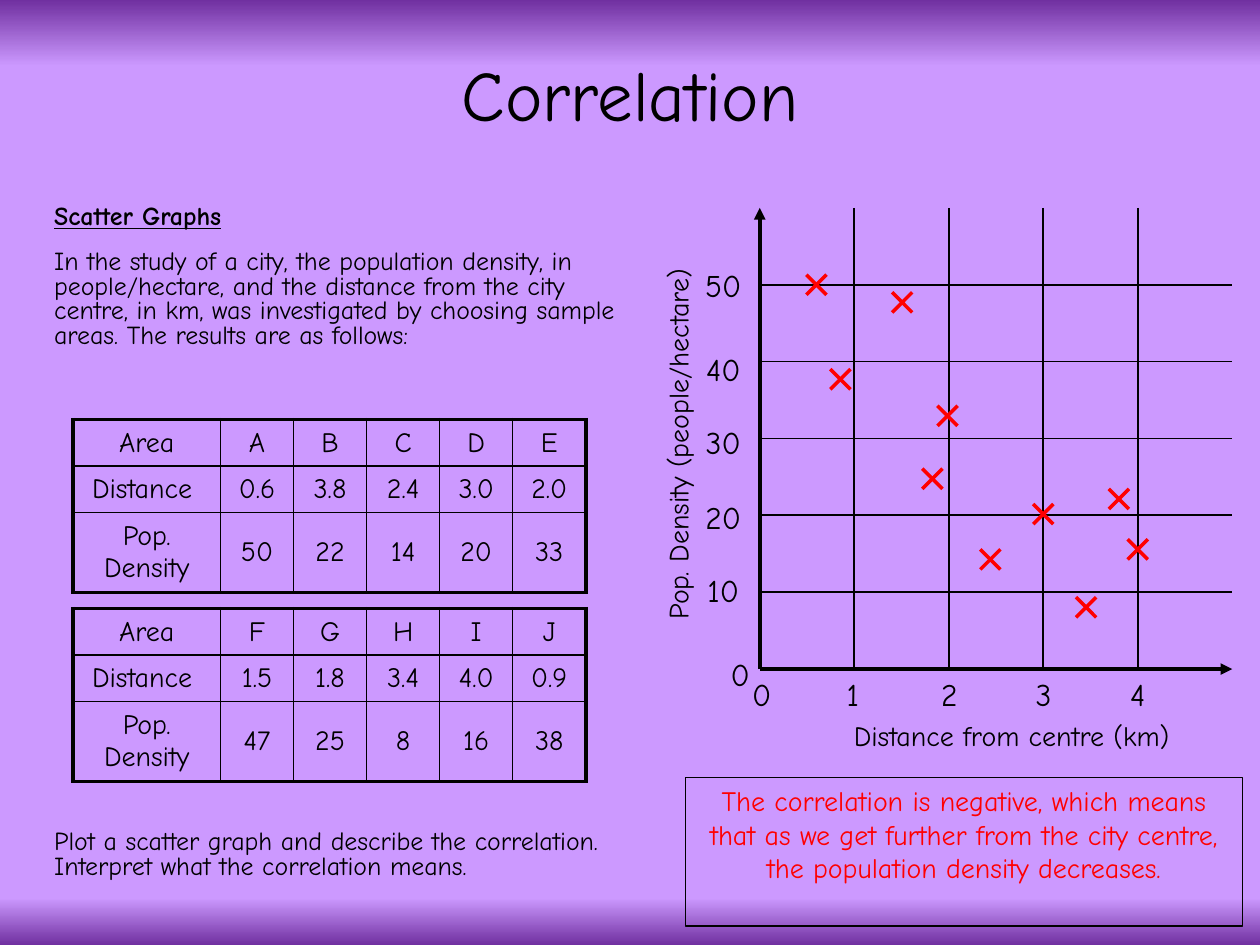
from lxml.etree import SubElement
from pptx import Presentation
from pptx.dml.color import RGBColor as RGB
from pptx.enum.shapes import MSO_CONNECTOR as CONN, MSO_SHAPE as SHAPE
from pptx.enum.text import MSO_ANCHOR as ANCHOR, PP_ALIGN as ALIGN
from pptx.oxml import parse_xml
from pptx.oxml.ns import nsdecls, qn
from pptx.util import Inches, Pt

FONT = "Comic Neue"
COLORS = {"edge": "7030A0", "ground": "CC99FF", "ink": "000000", "answer": "FF0000"}


def add_text(p, text, size, color="ink", align=ALIGN.CENTER):
    p.alignment = align
    r = p.add_run()
    r.text = text
    r.font.name = FONT
    r.font.size = Pt(size)
    r.font.color.rgb = RGB.from_string(COLORS[color])
    return r


def add_line(shapes, x1, y1, x2, y2, width, color="ink", arrow=False):
    line = shapes.add_connector(CONN.STRAIGHT, Inches(x1), Inches(y1), Inches(x2), Inches(y2))
    line.line.color.rgb = RGB.from_string(COLORS[color])
    line.line.width = Pt(width)
    if arrow:
        SubElement(line.line._get_or_add_ln(), qn("a:tailEnd"), type="triangle")
    SubElement(line._element.spPr, qn("a:effectLst"))


prs = Presentation()
prs.slide_width, prs.slide_height = Inches(10), Inches(7.5)
s = prs.slides.add_slide(prs.slide_layouts[5])

# Background gradient, dark at the top and bottom edges
stops = [(0, "edge"), (7, "ground"), (95, "ground"), (100, "edge")]
gradient = "".join(
    f'<a:gs pos="{pos * 1000}"><a:srgbClr val="{COLORS[name]}"/></a:gs>' for pos, name in stops)
s.element.cSld.insert(0, parse_xml(
    f'<p:bg {nsdecls("p", "a")}><p:bgPr><a:gradFill><a:gsLst>{gradient}</a:gsLst>'
    '<a:lin ang="5400000" scaled="0"/></a:gradFill><a:effectLst/></p:bgPr></p:bg>'))

# Title
title = s.shapes.title
title.left, title.top = Inches(0.69), Inches(0.24)
title.width, title.height = Inches(8.62), Inches(1.09)
title.text_frame.vertical_anchor = ANCHOR.MIDDLE
p = title.text_frame.paragraphs[0]
p.line_spacing = 0.9
add_text(p, "Correlation", 40.5)

# Question text, with room for the tables before the last paragraph
tf = s.shapes.add_textbox(Inches(0.08), Inches(1.58), Inches(5.08), Inches(5.75)).text_frame
tf.word_wrap = True
tf.margin_left = Inches(0.35)
question = [
    ("Scatter Graphs", 0),
    ("In the study of a city, the population density, in people/hectare, and the distance "
     "from the city centre, in km, was investigated by choosing sample areas. "
     "The results are as follows:", 11.5),
    ("Plot a scatter graph and describe the correlation. "
     "Interpret what the correlation means.", 275),
]
for i, (text, space) in enumerate(question):
    p = tf.paragraphs[0] if i == 0 else tf.add_paragraph()
    p.line_spacing = 0.8
    p.space_before = Pt(space)
    r = add_text(p, text, 14.8, align=ALIGN.LEFT)
    r.font.bold = r.font.underline = i == 0

# Data tables: heavy outer border, thin inner grid
tables = [
    (3.33, [["Area", "A", "B", "C", "D", "E"],
            ["Distance ", "0.6", "3.8", "2.4", "3.0", "2.0"],
            ["Pop. Density", "50", "22", "14", "20", "33"]]),
    (4.83, [["Area", "F", "G", "H", "I", "J"],
            ["Distance ", "1.5", "1.8", "3.4", "4.0", "0.9"],
            ["Pop. Density", "47", "25", "8", "16", "38"]]),
]
for top, rows in tables:
    table = s.shapes.add_table(3, 6, Inches(0.58), Inches(top), Inches(4.08), Inches(1.37)).table
    table.first_row = table.horz_banding = False
    for c, col in enumerate(table.columns):
        col.width = Inches(0.58 if c else 1.17)
    for row, height in zip(table.rows, (0.37, 0.37, 0.63)):
        row.height = Inches(height)
    for i, row in enumerate(rows):
        for j, text in enumerate(row):
            cell = table.cell(i, j)
            cell.vertical_anchor = ANCHOR.MIDDLE
            add_text(cell.text_frame.paragraphs[0], text, 16)
            tcPr = cell._tc.get_or_add_tcPr()
            outer = {"lnL": j == 0, "lnR": j == 5, "lnT": i == 0, "lnB": i == 2}
            for side, heavy in outer.items():
                ln = SubElement(tcPr, qn(f"a:{side}"), w=str(Pt(2.25 if heavy else 1)))
                fill = SubElement(ln, qn("a:solidFill"))
                SubElement(fill, qn("a:srgbClr"), val=COLORS["ink"])
            cell.fill.background()

# Graph grid and axes
LEFT, RIGHT, TOP, BOTTOM = 6.03, 9.78, 1.65, 5.31
STEP_X, STEP_Y = 0.75, 0.61
for i in range(1, 6):
    y = BOTTOM - i * STEP_Y
    add_line(s.shapes, LEFT, y, RIGHT, y, 1)
for i in range(1, 5):
    x = LEFT + i * STEP_X
    add_line(s.shapes, x, TOP, x, BOTTOM, 1)
add_line(s.shapes, LEFT, BOTTOM, RIGHT, BOTTOM, 2.25, arrow=True)
add_line(s.shapes, LEFT, BOTTOM, LEFT, TOP, 2.25, arrow=True)

# Scale numbers and axis titles: text, left, top, width, height, size, rotation
labels = [(str(i), 5.87 + i * STEP_X, 5.31, 0.25, 0.4, 18, 0) for i in range(5)]
labels += [(str(10 * i), 5.45, y, 0.58, 0.4, 18, 0)
           for i, y in enumerate((4.48, 3.9, 3.31, 2.73, 2.06), 1)]
labels += [("0", 5.7, 5.15, 0.25, 0.4, 18, 0),
           ("Distance from centre (km)", 6.53, 5.65, 3, 0.37, 16, 0),
           ("Pop. Density (people/hectare)", 3.59, 3.34, 3.58, 0.37, 16, 270)]
for text, x, y, w, h, size, rotation in labels:
    box = s.shapes.add_textbox(Inches(x), Inches(y), Inches(w), Inches(h))
    box.rotation = rotation
    box.text_frame.word_wrap = True
    add_text(box.text_frame.paragraphs[0], text, size)

# Plotted crosses, by centre, for areas A to J
ARM = 0.08
crosses = [(6.48, 2.26), (8.88, 3.96), (7.86, 4.44), (8.28, 4.08), (7.52, 3.3),
           (7.16, 2.4), (7.4, 3.8), (8.62, 4.82), (9.03, 4.36), (6.67, 3.01)]
for x, y in crosses:
    cross = s.shapes.add_group_shape()
    for dy in (ARM, -ARM):
        add_line(cross.shapes, x - ARM, y - dy, x + ARM, y + dy, 2, "answer")

# Answer box
sp = s.shapes.add_shape(SHAPE.RECTANGLE, Inches(5.44), Inches(6.17), Inches(4.42), Inches(1.18))
sp.shadow.inherit = False
sp.fill.background()
sp.line.color.rgb = RGB.from_string(COLORS["ink"])
sp.line.width = Pt(0.75)
tf = sp.text_frame
tf.word_wrap = True
tf.vertical_anchor = ANCHOR.TOP
add_text(tf.paragraphs[0], "The correlation is negative, which means that as we get further "
         "from the city centre, the population density decreases.", 16, "answer")

prs.save("out.pptx")
